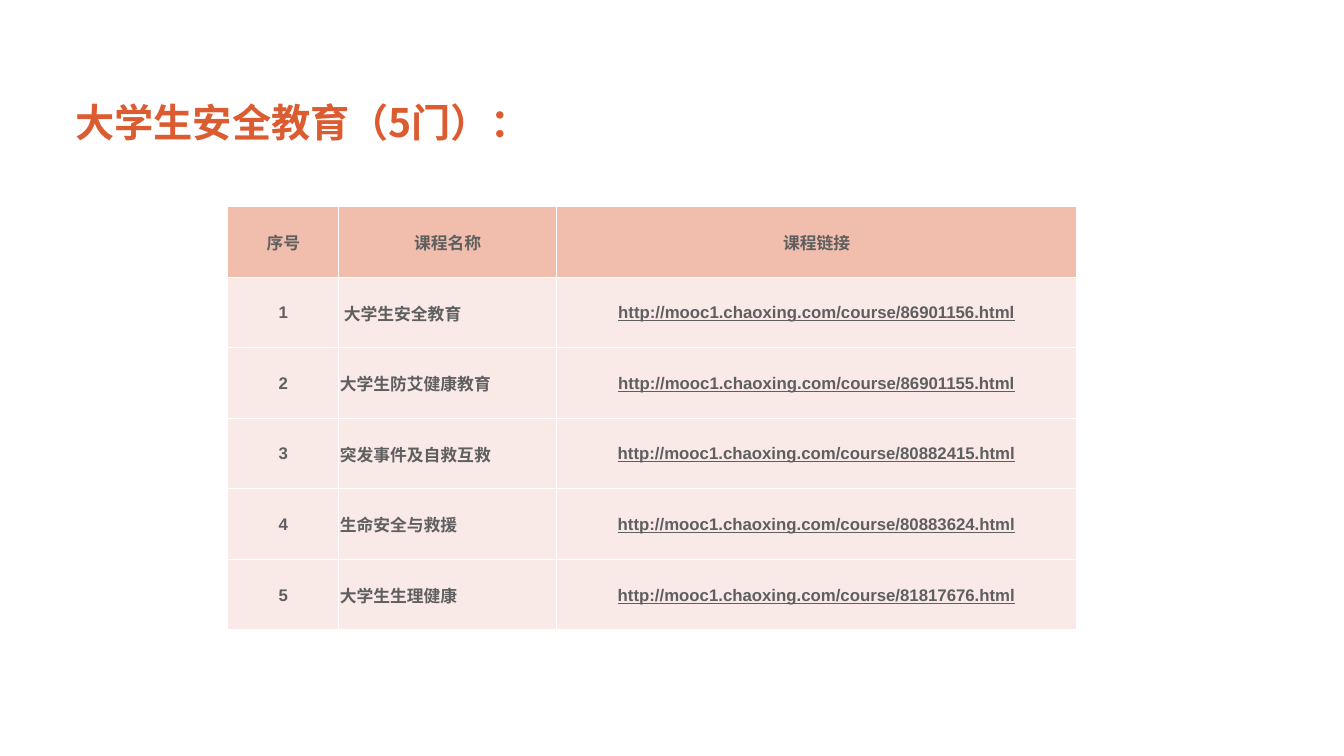
from lxml import etree
from pptx import Presentation
from pptx import util as u
from pptx.dml.color import RGBColor
from pptx.enum import text
from pptx.oxml.ns import qn

COLORS = {"title": "DC5C31", "body": "5F5F5F", "header": "F1BEAD", "row": "F9EAE8", "border": "FFFFFF"}
CJK_FONT = "Noto Sans CJK SC"
COLUMN_WIDTHS = (1.1, 2.16, 5.16)
ROW_HEIGHT = 0.7
HEADERS = ("序号", "课程名称", "课程链接")
COURSES = (
    ("大学生安全教育", "http://mooc1.chaoxing.com/course/86901156.html"),
    ("大学生防艾健康教育", "http://mooc1.chaoxing.com/course/86901155.html"),
    ("突发事件及自救互救", "http://mooc1.chaoxing.com/course/80882415.html"),
    ("生命安全与救援", "http://mooc1.chaoxing.com/course/80883624.html"),
    ("大学生生理健康", "http://mooc1.chaoxing.com/course/81817676.html"),
)


def write_text(frame, content, size=12, font="Arial", color="body", align="LEFT", underline=None, spacing=None):
    paragraph = frame.paragraphs[0]
    paragraph.alignment = getattr(text.PP_ALIGN, align)
    paragraph.line_spacing = spacing
    run = paragraph.add_run()
    run.text = content
    run.font.size = u.Pt(size)
    run.font.name = font
    run.font.bold = True
    run.font.underline = underline
    run.font.color.rgb = RGBColor.from_string(COLORS[color])
    latin = run.font._element.find(qn("a:latin"))
    east_asian = etree.Element(qn("a:ea"), typeface=CJK_FONT)
    latin.addnext(east_asian)


def add_title(slide, content):
    box = slide.shapes.add_textbox(u.Inches(0.65), u.Inches(0.73), u.Inches(11.9), u.Inches(0.77))
    frame = box.text_frame
    frame.word_wrap = True
    frame.vertical_anchor = text.MSO_ANCHOR.BOTTOM
    write_text(frame, content, size=28, font=CJK_FONT, color="title", spacing=0.9)


def add_borders(cell):
    properties = cell._tc.get_or_add_tcPr()
    for position, side in enumerate(("lnL", "lnR", "lnT", "lnB")):
        line = etree.Element(qn(f"a:{side}"), w=str(u.Pt(1)))
        fill = etree.SubElement(line, qn("a:solidFill"))
        etree.SubElement(fill, qn("a:srgbClr"), val=COLORS["border"])
        properties.insert(position, line)


def format_cell(cell, fill, indent=0.01):
    cell.fill.solid()
    cell.fill.fore_color.rgb = RGBColor.from_string(COLORS[fill])
    cell.vertical_anchor = text.MSO_ANCHOR.MIDDLE
    cell.margin_left = u.Inches(indent)
    cell.margin_right = cell.margin_top = u.Inches(0.01)
    cell.margin_bottom = 0
    add_borders(cell)


def add_course_table(slide):
    rows = [HEADERS] + [(str(number), *course) for number, course in enumerate(COURSES, 1)]
    shape = slide.shapes.add_table(
        len(rows), len(HEADERS), u.Inches(2.26), u.Inches(2.05),
        u.Inches(sum(COLUMN_WIDTHS)), u.Inches(ROW_HEIGHT * len(rows)))
    table = shape.table
    for column, width in zip(table.columns, COLUMN_WIDTHS):
        column.width = u.Inches(width)
    for row_index, values in enumerate(rows):
        table.rows[row_index].height = u.Inches(ROW_HEIGHT)
        for column_index, value in enumerate(values):
            cell = table.cell(row_index, column_index)
            is_header = row_index == 0
            is_name = column_index == 1 and not is_header
            is_link = column_index == 2 and not is_header
            format_cell(cell, "header" if is_header else "row",
                        indent=0.05 if is_name and row_index == 1 else 0.01)
            write_text(cell.text_frame, value, align="LEFT" if is_name else "CENTER",
                       underline=is_link or None)


def main():
    presentation = Presentation()
    presentation.slide_width = u.Inches(13.33)
    presentation.slide_height = u.Inches(7.5)
    slide = presentation.slides.add_slide(presentation.slide_layouts[6])
    add_title(slide, "大学生安全教育（5门）：")
    add_course_table(slide)
    presentation.save("out.pptx")


if __name__ == "__main__":
    main()
